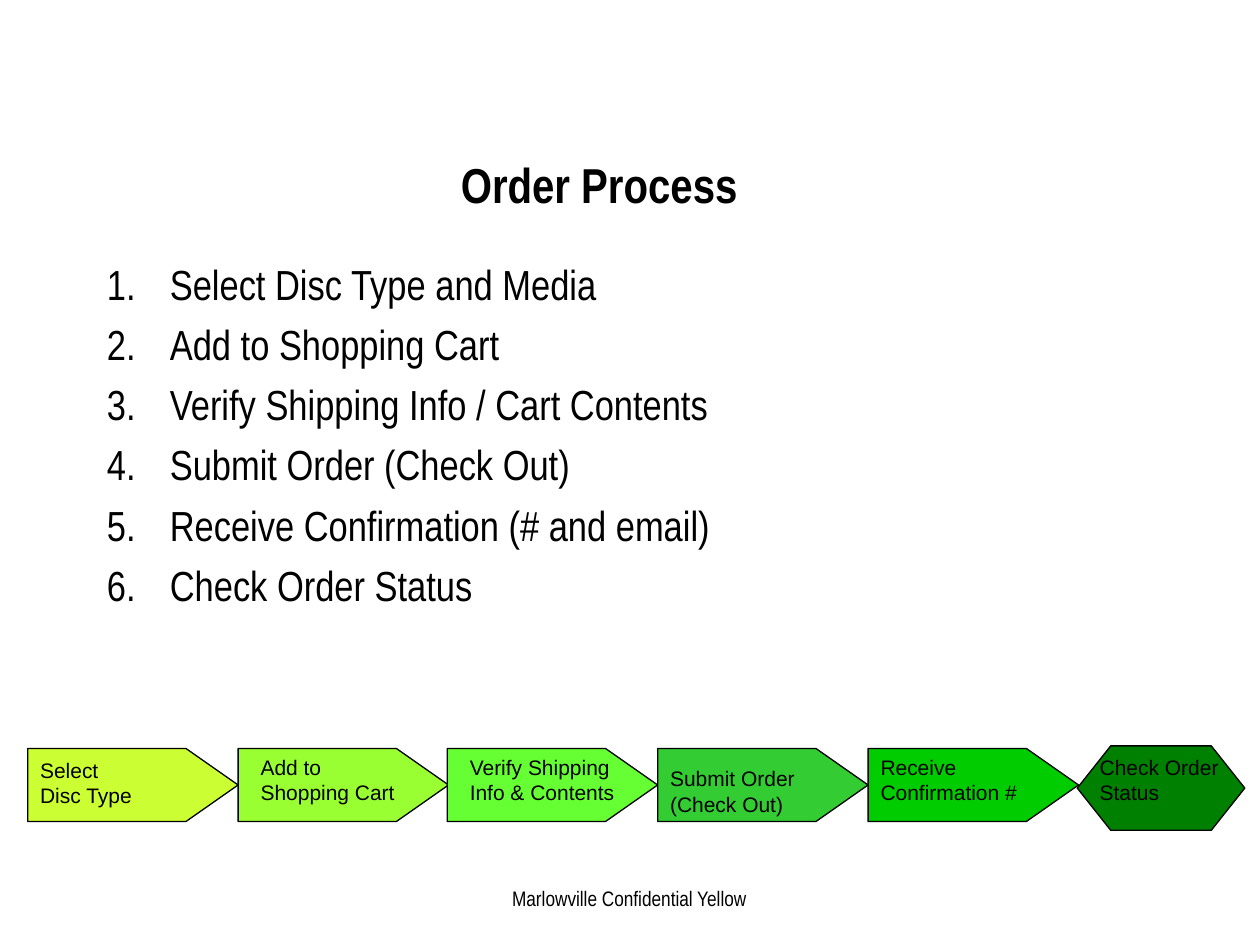
from pptx import Presentation
from pptx.dml.color import RGBColor
from pptx.enum.shapes import MSO_SHAPE as Shape
from pptx.enum.text import MSO_ANCHOR as Anchor, PP_ALIGN as Align
from pptx.util import Inches, Pt

TITLE = "Order Process"
FOOTER = "Marlowville Confidential Yellow"
STEPS = [
    "Select Disc Type and Media",
    "Add to Shopping Cart",
    "Verify Shipping Info / Cart Contents",
    "Submit Order (Check Out)",
    "Receive Confirmation (# and email)",
    "Check Order Status",
]
# label, fill, label left offset from its arrow, label top, label width
STAGES = [
    ("Select\vDisc Type", "CCFF33", 0, 5.96, 1.33),
    ("Add to Shopping Cart", "99FF33", 0.08, 5.94, 1.33),
    ("Verify Shipping Info & Contents", "66FF33", 0.08, 5.94, 1.42),
    ("Submit Order (Check Out)", "33CC33", 0, 6.03, 1.33),
    ("Receive Confirmation #", "00CC00", 0, 5.94, 1.33),
    ("Check Order Status", "008000", 0.08, 5.94, 1.33),
]
THEME = {
    "ink": RGBColor.from_string("000000"),
    "outline": Pt(0.75),
    "title": {"name": "Arial Narrow", "size": Pt(28), "bold": True},
    "list": {"name": "Arial Narrow", "size": Pt(24)},
    "footer": {"name": "Arial Narrow", "size": Pt(12)},
    "label": {"name": "Arial", "size": Pt(12)},
}
FLOW_LEFT, FLOW_PITCH = 0.22, 5 / 3
ARROW_TOP, ARROW_HEIGHT = 5.94, 0.58
END_TOP, END_WIDTH, END_HEIGHT = 5.92, 1.33, 0.67


def place(left, top, width, height):
    return [Inches(round(value, 2)) for value in (left, top, width, height)]


def add_text(page, area, lines, style, align=Align.LEFT, anchor=Anchor.TOP):
    box = page.shapes.add_textbox(*place(*area))
    frame = box.text_frame
    frame.word_wrap = True
    frame.vertical_anchor = anchor
    frame.text = "\n".join(lines)
    for para in frame.paragraphs:
        para.alignment = align
        for span in para.runs:
            for key, value in THEME[style].items():
                setattr(span.font, key, value)
            span.font.color.rgb = THEME["ink"]
    return frame


def number_list(frame):
    for index, para in enumerate(frame.paragraphs):
        props = para._p.get_or_add_pPr()
        props.set("marL", str(Inches(0.5)))
        props.set("indent", str(-Inches(0.5)))
        if index:
            para.space_before = Pt(5.6)
        bullet = props.makeelement(
            "{http://schemas.openxmlformats.org/drawingml/2006/main}buAutoNum",
            {"type": "arabicPeriod"})
        props.append(bullet)


def add_stage(page, kind, area, fill):
    stage = page.shapes.add_shape(kind, *place(*area))
    stage.shadow.inherit = False
    stage.fill.solid()
    stage.fill.fore_color.rgb = RGBColor.from_string(fill)
    stage.line.color.rgb = THEME["ink"]
    stage.line.width = THEME["outline"]
    return stage


def add_flow(page):
    lefts = [FLOW_LEFT + index * FLOW_PITCH for index in range(len(STAGES))]
    for left, (_, fill, *_) in zip(lefts[:-1], STAGES):
        arrow = add_stage(page, Shape.PENTAGON,
                          (left, ARROW_TOP, FLOW_PITCH, ARROW_HEIGHT), fill)
        arrow.adjustments[0] = 0.714
    add_stage(page, Shape.FLOWCHART_PREPARATION,
              (lefts[-1], END_TOP, END_WIDTH, END_HEIGHT), STAGES[-1][1])
    for left, (label, _, offset, top, width) in zip(lefts, STAGES):
        add_text(page, (left + offset, top, width, 0.5), [label], "label")


def main():
    deck = Presentation()
    deck.slide_width, deck.slide_height = Inches(10), Inches(7.5)
    page = deck.slides.add_slide(deck.slide_layouts[6])
    add_text(page, (3.83, 6.98, 2.33, 0.35), [FOOTER], "footer", Align.CENTER)
    add_text(page, (0.42, 1.17, 8.67, 0.58), [TITLE], "title",
             Align.CENTER, Anchor.MIDDLE)
    number_list(add_text(page, (0.75, 2, 8.5, 3.42), STEPS, "list"))
    add_flow(page)
    deck.save("out.pptx")


if __name__ == "__main__":
    main()
